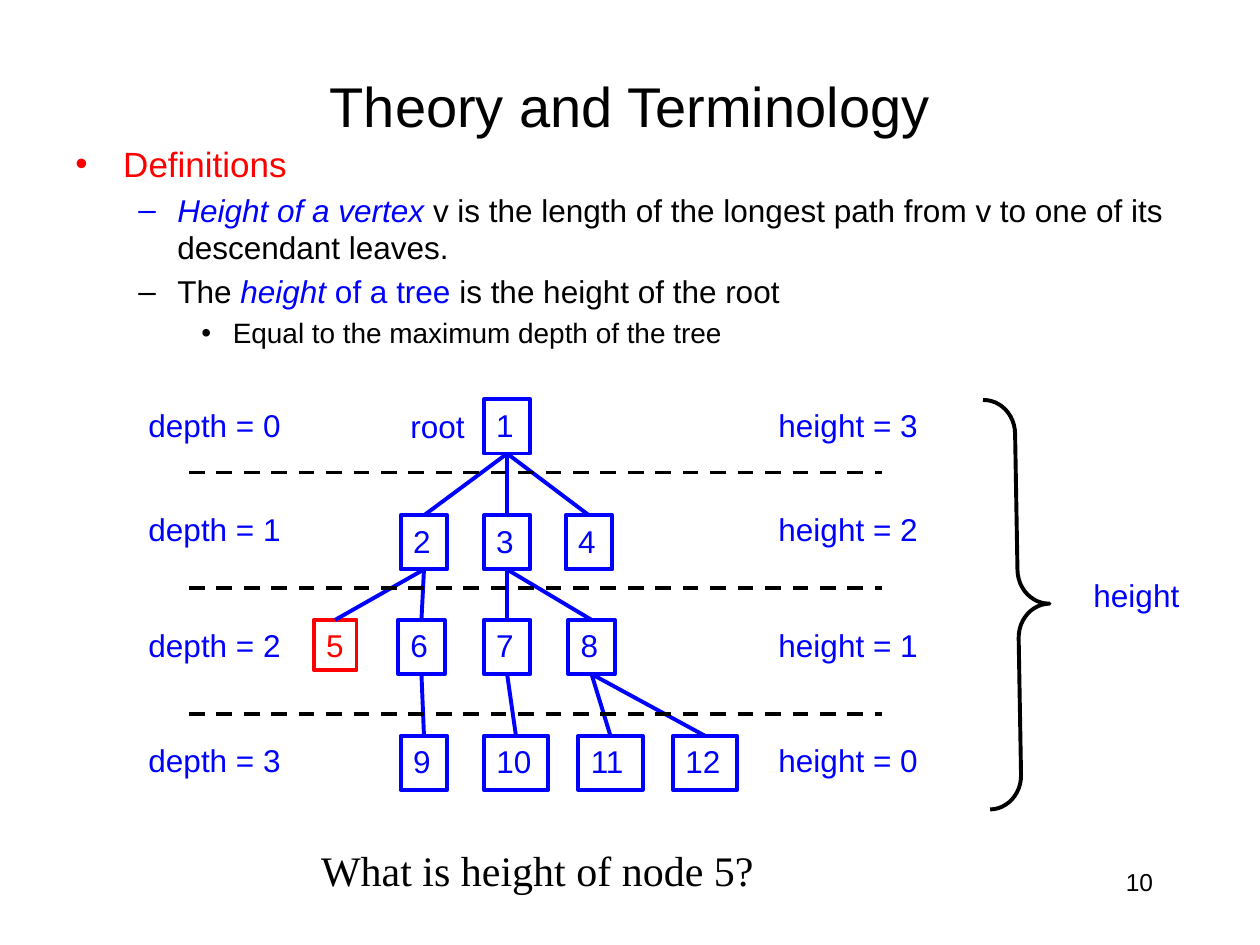
from lxml import etree
from pptx import Presentation
from pptx.dml.color import RGBColor
from pptx.enum.dml import MSO_LINE
from pptx.enum.shapes import MSO_CONNECTOR, MSO_SHAPE
from pptx.enum.text import MSO_ANCHOR, MSO_AUTO_SIZE, PP_ALIGN
from pptx.oxml.ns import qn
from pptx.util import Inches, Pt

RECT, BRACE = MSO_SHAPE.RECTANGLE, MSO_SHAPE.LEFT_BRACE
STRAIGHT, DASH = MSO_CONNECTOR.STRAIGHT, MSO_LINE.DASH
LEFT, CENTER, RIGHT = PP_ALIGN.LEFT, PP_ALIGN.CENTER, PP_ALIGN.RIGHT
TOP, MIDDLE = MSO_ANCHOR.TOP, MSO_ANCHOR.MIDDLE
FIT = MSO_AUTO_SIZE.SHAPE_TO_FIT_TEXT
BOTTOM_SITE, TOP_SITE = 2, 0

COLORS = {"black": "000000", "blue": "0000FF", "red": "FF0000"}


class SlideBuilder:
    font = "Arial"
    size = 18
    line_width = 2.25

    def __init__(self, slide):
        self.shapes = slide.shapes

    def rgb(self, color):
        return RGBColor.from_string(COLORS[color])

    def stroke(self, shape, color):
        shape.line.color.rgb = self.rgb(color)
        shape.line.width = Pt(self.line_width)

    def run(self, p, text, color, size=None, font=None, italic=False):
        r = p.add_run()
        r.text = text
        r.font.name = font or self.font
        r.font.size = Pt(size or self.size)
        r.font.italic = italic
        r.font.color.rgb = self.rgb(color)

    def text(self, box, text, color="blue", size=None, font=None,
             align=LEFT, anchor=TOP, wrap=False):
        sp = self.shapes.add_textbox(*map(Inches, box))
        self.fill_frame(sp.text_frame, text, color, size, font, align, anchor, wrap)

    def fill_frame(self, tf, text, color, size=None, font=None,
                   align=LEFT, anchor=TOP, wrap=False):
        tf.word_wrap = wrap
        if not wrap:
            tf.auto_size = FIT
        tf.vertical_anchor = anchor
        p = tf.paragraphs[0]
        p.alignment = align
        self.run(p, text, color, size, font)

    def bullets(self, box, items):
        tf = self.shapes.add_textbox(*map(Inches, box)).text_frame
        tf.word_wrap = True
        for i, (level, size, runs) in enumerate(items):
            p = tf.add_paragraph() if i else tf.paragraphs[0]
            p.level = level
            p.space_before = Pt(size * 0.2)
            margin, hang, char = [(0.38, 0.38, "•"), (0.81, 0.31, "–"), (1.25, 0.25, "•")][level]
            pPr = p._p.get_or_add_pPr()
            pPr.set("marL", str(Inches(margin)))
            pPr.set("indent", str(-Inches(hang)))
            etree.SubElement(pPr, qn("a:buFont")).set("typeface", self.font)
            etree.SubElement(pPr, qn("a:buChar")).set("char", char)
            for text, color, italic in runs:
                self.run(p, text, color, size, italic=italic)

    def shape(self, kind, box, color):
        sp = self.shapes.add_shape(kind, *map(Inches, box))
        sp.shadow.inherit = False
        sp.fill.background()
        self.stroke(sp, color)
        return sp

    def node(self, box, label, color="blue"):
        sp = self.shape(RECT, box, color)
        self.fill_frame(sp.text_frame, label, color)
        return sp

    def line(self, start, end, color):
        c = self.shapes.add_connector(STRAIGHT, *map(Inches, start + end))
        self.stroke(c, color)
        etree.SubElement(c._element.spPr, qn("a:effectLst"))
        return c

    def edge(self, parent, child):
        c = self.line((0, 0), (1, 1), "blue")
        c.begin_connect(parent, BOTTOM_SITE)
        c.end_connect(child, TOP_SITE)

    def divider(self, y):
        self.line((1.5, y), (7, y), "black").line.dash_style = DASH


def main():
    prs = Presentation()
    prs.slide_width, prs.slide_height = Inches(10), Inches(7.5)
    s = SlideBuilder(prs.slides.add_slide(prs.slide_layouts[6]))

    # Title, definitions and page number
    s.text((0.75, 0.42, 8.5, 0.83), "Theory and Terminology", "black", 32,
           align=CENTER, anchor=MIDDLE, wrap=True)
    s.bullets((0.5, 1.08, 9, 6.08), [
        (0, 20, [("Definitions", "red", False)]),
        (1, 18, [("Height of a vertex", "blue", True),
                 (" v is the length of the longest path from v to one of its "
                  "descendant leaves.", "black", False)]),
        (1, 18, [("The ", "black", False), ("height", "blue", True),
                 (" of a tree", "blue", False),
                 (" is the height of the root", "black", False)]),
        (2, 16, [("Equal to the maximum depth of the tree", "black", False)]),
    ])
    s.text((7.17, 6.83, 2.08, 0.5), "10", "black", 14, align=RIGHT, wrap=True)

    # Tree nodes: top of each level, then label and left edge
    levels = [
        (3.17, {1: 3.84}),
        (4.09, {2: 3.18, 3: 3.84, 4: 4.49}),
        (4.92, {5: 2.49, 6: 3.16, 7: 3.84, 8: 4.51}),
        (5.84, {9: 3.18, 10: 3.84, 11: 4.59, 12: 5.34}),
    ]
    nodes = {}
    for y, row in levels:
        for n, x in row.items():
            if n == 5:
                nodes[n] = s.node((x, y, 0.34, 0.4), str(n), "red")
            else:
                nodes[n] = s.node((x, y, 0.37 if n < 10 else 0.51, 0.43), str(n))

    # Tree edges
    children = {1: (2, 3, 4), 2: (5, 6), 3: (7, 8), 6: (9,), 7: (10,), 8: (11, 12)}
    for parent, kids in children.items():
        for kid in kids:
            s.edge(nodes[parent], nodes[kid])

    # Level dividers and labels
    for y in (3.75, 4.67, 5.67):
        s.divider(y)
    for depth, y in enumerate((3.17, 4, 4.92, 5.83)):
        s.text((1.08, y, 1.25, 0.4), f"depth = {depth}")
        s.text((6.08, y, 1.31, 0.4), f"height = {3 - depth}")
    s.text((3.16, 3.18, 0.63, 0.4), "root")

    # Overall height
    brace = s.shape(BRACE, (7.83, 3.17, 0.5, 3.25), "black")
    brace.rotation = 179
    brace.adjustments[0], brace.adjustments[1] = 0.54, 0.5
    s.text((8.58, 4.52, 0.88, 0.4), "height")

    # Question
    s.text((2.45, 6.65, 3.67, 0.5), "What is height of node 5?", "black", 24,
           "Times New Roman")

    prs.save("out.pptx")


if __name__ == "__main__":
    main()
